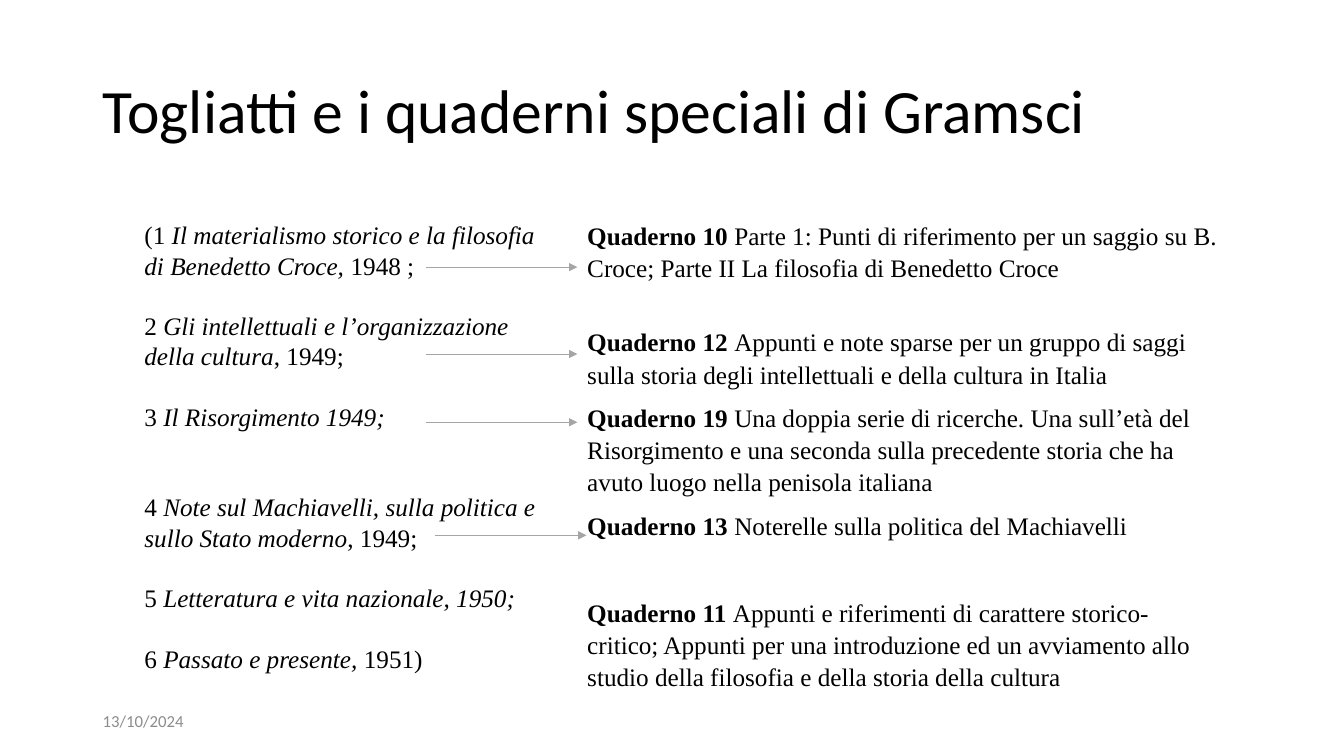
from pptx import Presentation
from pptx.dml.color import RGBColor
from pptx.enum.shapes import MSO_CONNECTOR
from pptx.enum.text import MSO_ANCHOR, MSO_AUTO_SIZE, PP_ALIGN
from pptx.oxml.ns import qn
from pptx.util import Cm, Pt
from lxml.etree import SubElement

COLORS = {"text": "000000", "date": "8C8C8C", "arrow": "A5A5A5"}
TITLE = "Togliatti e i quaderni speciali di Gramsci"
DATE = "13/10/2024"

# Each paragraph: plain and emphasised runs in turn, then the gap after it in points
LINE = 21.6
VOLUMES = [
    (["(1 ", "Il materialismo storico e la filosofia di Benedetto Croce, ", "1948 ;"], LINE),
    (["2 ", "Gli intellettuali e l’organizzazione della cultura", ", 1949;"], LINE),
    (["3 ", "Il Risorgimento 1949;"], 2 * LINE),
    (["4 ", "Note sul Machiavelli, sulla politica e sullo Stato moderno", ", 1949;"], LINE),
    (["5 ", "Letteratura e vita nazionale, 1950;"], LINE),
    (["6 ", "Passato e presente,", " 1951)"], 0),
]
NOTEBOOKS = [
    (["", "Quaderno 10 ", "Parte 1: Punti di riferimento per un saggio su B. Croce; "
      "Parte II La filosofia di Benedetto Croce"], 30),
    (["", "Quaderno 12 ", "Appunti e note sparse per un gruppo di saggi sulla storia "
      "degli intellettuali e della cultura in Italia"], 8),
    (["", "Quaderno 19 ", "Una doppia serie di ricerche. Una sull’età del Risorgimento e una "
      "seconda sulla precedente storia che ha avuto luogo nella penisola italiana"], 8),
    (["", "Quaderno 13 ", "Noterelle sulla politica del Machiavelli"], 39),
    (["", "Quaderno 11 ", "Appunti e riferimenti di carattere storico-critico; Appunti per una "
      "introduzione ed un avviamento allo studio della filosofia e della storia della cultura"], 0),
]
ARROW_LENGTH = 3.81
ARROWS = [(10.74, 6.73), (10.74, 8.92), (10.74, 10.64), (10.97, 13.49)]

BODY = {"name": "Times New Roman", "size": Pt(18), "bold": False, "italic": False}


def set_font(font, color, **formats):
    for key, value in formats.items():
        setattr(font, key, value)
    font.color.rgb = RGBColor.from_string(COLORS[color])


def add_box(s, box):
    tf = s.shapes.add_textbox(*map(Cm, box)).text_frame
    tf.word_wrap = True
    tf.auto_size = MSO_AUTO_SIZE.NONE
    return tf


def add_list(s, box, items, emphasis, line):
    tf = add_box(s, box)
    for i, (runs, gap) in enumerate(items):
        p = tf.add_paragraph() if i else tf.paragraphs[0]
        p.line_spacing, p.space_after = Pt(line), Pt(gap)
        for j, text in enumerate(runs):
            if text:
                r = p.add_run()
                r.text = text
                set_font(r.font, "text", **{**BODY, emphasis: j == 1})


def add_arrow(s, x, y):
    c = s.shapes.add_connector(MSO_CONNECTOR.STRAIGHT, Cm(x), Cm(y), Cm(x + ARROW_LENGTH), Cm(y))
    c.line.width = Pt(0.5)
    c.line.color.rgb = RGBColor.from_string(COLORS["arrow"])
    SubElement(c.line._get_or_add_ln(), qn("a:tailEnd"), type="triangle")
    SubElement(c._element.spPr, qn("a:effectLst"))


def main():
    prs = Presentation()
    prs.slide_width, prs.slide_height = Cm(33.87), Cm(19.05)
    s = prs.slides.add_slide(prs.slide_layouts[5])

    title = s.shapes.title
    title.left, title.top, title.width, title.height = map(Cm, (2.34, 1.02, 29.21, 3.68))
    tf = title.text_frame
    tf.text = TITLE
    tf.vertical_anchor = MSO_ANCHOR.MIDDLE
    p = tf.paragraphs[0]
    p.alignment, p.line_spacing = PP_ALIGN.LEFT, 0.9
    set_font(p.runs[0].font, "text", name="Calibri", size=Pt(44))

    tf = add_box(s, (2.34, 17.65, 7.62, 1.02))
    tf.text = DATE
    tf.vertical_anchor = MSO_ANCHOR.MIDDLE
    set_font(tf.paragraphs[0].runs[0].font, "date", name="Calibri", size=Pt(12))

    add_list(s, (3.39, 5.41, 10.64, 11.79), VOLUMES, "italic", LINE)
    add_list(s, (14.55, 5.38, 16.43, 14.25), NOTEBOOKS, "bold", 23)
    for x, y in ARROWS:
        add_arrow(s, x, y)

    prs.save("out.pptx")


if __name__ == "__main__":
    main()
